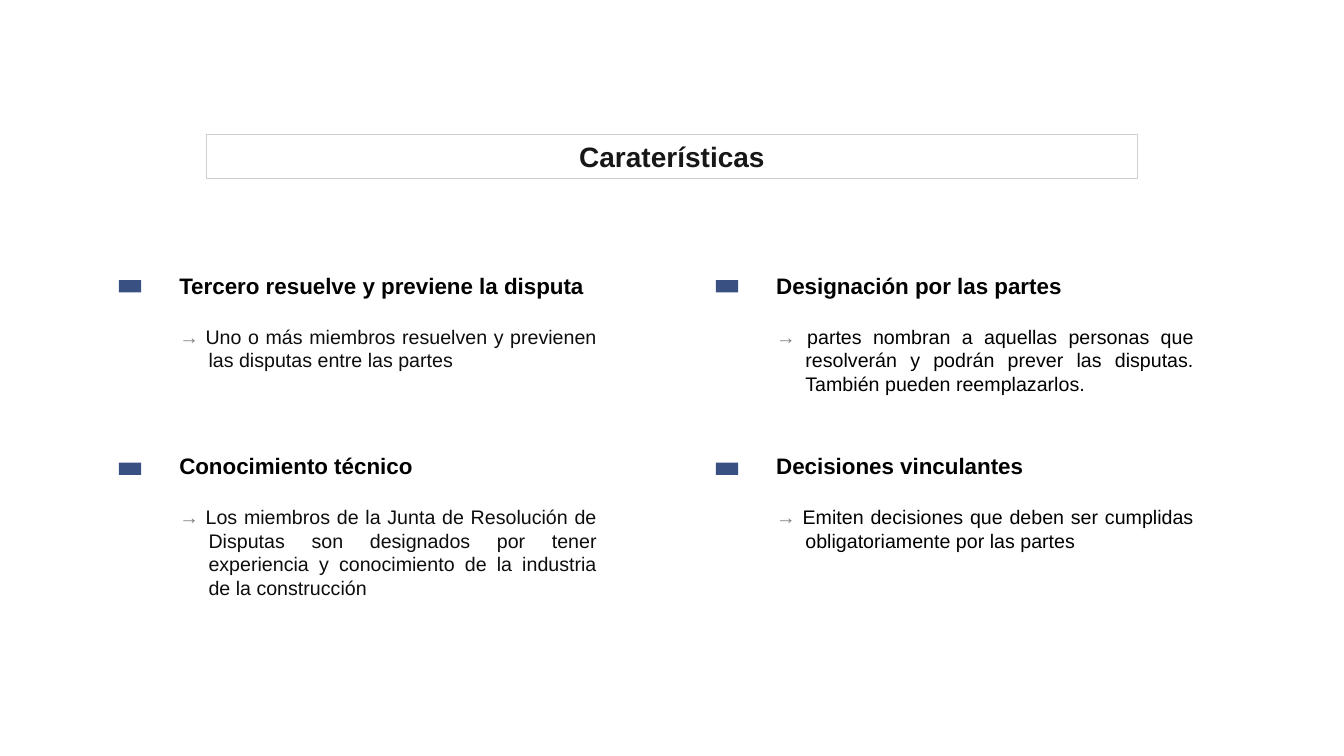
import pptx
import pptx.util
import pptx.dml.color
import pptx.enum.shapes
import pptx.enum.text
import pptx.oxml.ns
import lxml.etree

Inches = pptx.util.Inches
Pt = pptx.util.Pt
ALIGN = pptx.enum.text.PP_ALIGN


def color(hex_string):
    return pptx.dml.color.RGBColor.from_string(hex_string)


def add_run(paragraph, text, size, hex_string, bold=False):
    run = paragraph.add_run()
    run.text = text
    run.font.name = "Arial"
    run.font.size = Pt(size)
    run.font.bold = bold
    run.font.color.rgb = color(hex_string)


presentation = pptx.Presentation()
presentation.slide_width = Inches(13.33)
presentation.slide_height = Inches(7.5)
slide = presentation.slides.add_slide(presentation.slide_layouts[5])

title = slide.shapes.title
title.left, title.top = Inches(2.05), Inches(1.33)
title.width, title.height = Inches(9.23), Inches(0.44)
title.line.color.rgb = color("D0CECE")
title.line.width = Pt(0.75)
title.text_frame.vertical_anchor = pptx.enum.text.MSO_ANCHOR.MIDDLE
title.text_frame.auto_size = pptx.enum.text.MSO_AUTO_SIZE.NONE
title_paragraph = title.text_frame.paragraphs[0]
title_paragraph.alignment = ALIGN.CENTER
add_run(title_paragraph, "Caraterísticas", 20, "181717", True)

features = [
    ("Tercero resuelve y previene la disputa",
     "Uno o más miembros resuelven y previenen las disputas entre las partes", "0D0D0D"),
    ("Designación por las partes",
     "partes nombran a aquellas personas que resolverán y podrán prever las disputas. "
     "También pueden reemplazarlos.", "000000"),
    ("Conocimiento técnico",
     "Los miembros de la Junta de Resolución de Disputas son designados por tener "
     "experiencia y conocimiento de la industria de la construcción", "0D0D0D"),
    ("Decisiones vinculantes",
     "Emiten decisiones que deben ser cumplidas obligatoriamente por las partes", "000000"),
]
column_pitch = 5.92
row_pitch = 1.79
marker_pitch = 1.81

for index, (heading, detail, detail_color) in enumerate(features):
    row, column = divmod(index, 2)

    marker = slide.shapes.add_shape(
        pptx.enum.shapes.MSO_SHAPE.RECTANGLE,
        Inches(1.18 + column * column_pitch), Inches(2.78 + row * marker_pitch),
        Inches(0.22), Inches(0.12))
    marker.shadow.inherit = False
    marker.line.fill.background()
    marker.fill.solid()
    marker.fill.fore_color.rgb = color("002060")
    marker_color = marker.fill._xPr.find(".//" + pptx.oxml.ns.qn("a:srgbClr"))
    lxml.etree.SubElement(marker_color, pptx.oxml.ns.qn("a:alpha"), val="78000")

    box = slide.shapes.add_textbox(
        Inches(1.68 + column * column_pitch), Inches(2.65 + row * row_pitch),
        Inches(4.34), Inches(1.6))
    box.text_frame.word_wrap = True
    heading_paragraph = box.text_frame.paragraphs[0]
    heading_paragraph.alignment = ALIGN.JUSTIFY
    heading_paragraph.space_after = Pt(18.4)
    add_run(heading_paragraph, heading, 16, "000000", True)

    detail_paragraph = box.text_frame.add_paragraph()
    detail_paragraph.alignment = ALIGN.JUSTIFY
    detail_paragraph.line_spacing = Pt(16.8)
    properties = detail_paragraph._p.get_or_add_pPr()
    properties.set("marL", str(Inches(0.29)))
    properties.set("indent", str(-Inches(0.29)))
    add_run(detail_paragraph, "→ ", 14, "808080")
    add_run(detail_paragraph, detail, 14, detail_color)

presentation.save("out.pptx")
